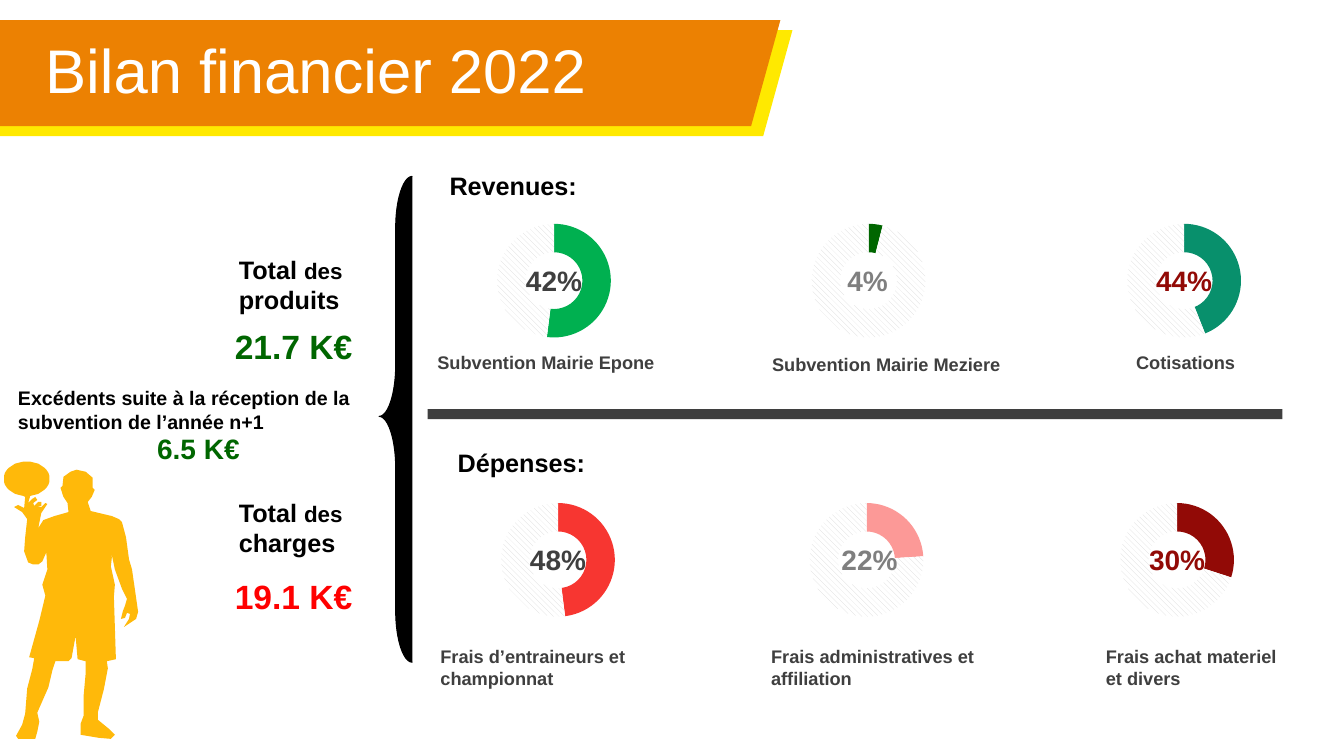
from math import cos, radians, sin

from lxml import etree
from pptx import Presentation
from pptx.chart.data import CategoryChartData
from pptx.dml.color import RGBColor
from pptx.enum.chart import XL_CHART_TYPE as ChartType
from pptx.enum.dml import MSO_PATTERN as Pattern
from pptx.enum.shapes import MSO_SHAPE as Shape
from pptx.enum.text import MSO_ANCHOR as Anchor, PP_ALIGN as Align
from pptx.oxml.ns import qn
from pptx.util import Inches, Pt

THEME = {
    "font": "Arial",
    "title": 44, "total": 24, "share": 20, "heading": 18, "small": 16, "note": 14, "caption": 13,
    "white": "FFFFFF", "black": "000000", "dark": "3F3F3F", "hatch": "D9D9D9",
    "orange": "EC8102", "yellow": "FFE900", "player": "FFB90A",
    "green": "006600", "red": "FF0000",
}
SHARE_COLORS = ("3F3F3F", "7F7F7F", "920A06")

# Banner: colour, top, top-right x, bottom-right x
BANNERS = [("yellow", 0.3, 7.86, 7.57), ("orange", 0.2, 7.74, 7.45)]
BANNER_HEIGHT = 1.05

# Section: heading, its left and top, chart top, then the three rings
# Ring: left, share left, hole, value, colour, share, caption, caption left and top
SECTIONS = [
    ("Revenues:", 4.36, 1.64, 2.06, [
        (4.79, 5.08, 72, 52, "00B050", "42%", "Subvention Mairie Epone", 4.24, 3.44),
        (7.91, 8.19, 78, 4, "006600", "4%", "Subvention Mairie Meziere", 7.56, 3.46),
        (11.04, 11.33, 78, 44, "08906C", "44%", "Cotisations", 11.17, 3.44),
    ]),
    ("Dépenses:", 4.44, 4.39, 4.83, [
        (4.83, 5.12, 78, 48, "F73631", "48%", "Frais d’entraineurs et championnat", 4.27, 6.35),
        (7.89, 8.21, 78, 24, "FC9997", "22%", "Frais administratives et affiliation", 7.55, 6.35),
        (10.97, 11.26, 78, 30, "920A06", "30%", "Frais achat materiel\net divers", 10.87, 6.35),
    ]),
]
RING_SIZE = (1.41, 1.45)
RING_LAYOUT = {"x": 0.1, "y": 0.11, "w": 0.8, "h": 0.78}

# Total: what is counted, label top, amount, amount top, colour
TOTALS = [("produits", 2.47, "21.7 K€", 3.18, "green"), ("charges", 4.88, "19.1 K€", 5.66, "red")]
SURPLUS = ("Excédents suite à la réception de la subvention de l’année n+1", "6.5 K€")

# Player outline in hundredths of an inch, clockwise from the finger under the ball
BALL = {"cx": 26.5, "cy": 475, "rx": 22.5, "ry": 17}
PLAYER = [
    (28, 499), (32, 495), (35, 493), (37, 496), (33, 499), (34, 502), (38, 498), (41, 498),
    (41, 502), (37, 503), (41, 503), (45, 499), (47, 500), (41, 509), (38, 524), (43, 516),
    (54, 512), (68, 508), (67, 499), (63, 493), (60, 484), (62, 482), (63, 473), (70, 468),
    (76, 466), (85, 468), (92, 474), (92, 484), (94, 486), (91, 493), (87, 498), (90, 507),
    (111, 512), (118, 515), (121, 518), (125, 533), (128, 555), (131, 565), (137, 607), (135, 614),
    (123, 622), (128, 614), (129, 609), (126, 608), (124, 613), (120, 614), (122, 606), (124, 601),
    (126, 594), (121, 584), (114, 565), (110, 546), (111, 553), (110, 562), (114, 580), (113, 592),
    (115, 654), (106, 656), (107, 663), (103, 684), (97, 707), (97, 714), (108, 723), (114, 729),
    (110, 733), (98, 732), (80, 729), (80, 718), (83, 710), (83, 690), (85, 668), (85, 656),
    (77, 654), (75, 631), (71, 653), (68, 656), (55, 656), (52, 665), (48, 682), (37, 707),
    (39, 716), (37, 726), (35, 733), (18, 733), (16, 730), (22, 719), (25, 708), (27, 683),
    (32, 664), (34, 653), (29, 652), (39, 616), (45, 591), (42, 580), (47, 565), (46, 548),
    (42, 557), (38, 560), (33, 560), (28, 558), (24, 547), (25, 533), (27, 515), (22, 508),
    (14, 503), (18, 501), (24, 504), (25, 493),
]


def color(name):
    return RGBColor.from_string(THEME.get(name, name))


def paint(shape, fill, line=None):
    shape.shadow.inherit = False
    shape.fill.solid()
    shape.fill.fore_color.rgb = color(fill)
    if line:
        shape.line.color.rgb = color(line)
        shape.line.width = Pt(0.75)
    else:
        shape.line.fill.background()


def add_outline(slide, points, fill):
    """Closed filled polygon; points are in hundredths of an inch."""
    builder = slide.shapes.build_freeform(*points[0], scale=Inches(0.01))
    builder.add_line_segments(points[1:], close=True)
    paint(builder.convert_to_shape(), fill)


def add_text(slide, box, text, size, ink, bold=True, anchor=Anchor.TOP,
             align=Align.LEFT, inset=True, spacing=1.0):
    """text is a string, one paragraph a line, or a list of (text, size) runs."""
    frame = slide.shapes.add_textbox(*map(Inches, box)).text_frame
    margins = (0.1, 0.05) if inset else (0, 0)
    layout = {"word_wrap": True, "vertical_anchor": anchor,
              "margin_left": Inches(margins[0]), "margin_right": Inches(margins[0]),
              "margin_top": Inches(margins[1]), "margin_bottom": Inches(margins[1])}
    for key, value in layout.items():
        setattr(frame, key, value)
    lines = [[(line, size)] for line in text.split("\n")] if isinstance(text, str) else [text]
    for number, runs in enumerate(lines):
        paragraph = frame.add_paragraph() if number else frame.paragraphs[0]
        paragraph.alignment = align
        paragraph.line_spacing = spacing
        for words, run_size in runs:
            run = paragraph.add_run()
            run.text = words
            for key, value in {"name": THEME["font"], "size": Pt(THEME[run_size]), "bold": bold}.items():
                setattr(run.font, key, value)
            run.font.color.rgb = color(ink)


def add_ring(slide, left, top, hole, value, ink):
    ring_data = CategoryChartData()
    ring_data.categories = ["1", "2"]
    ring_data.add_series("Series 1", (value, 100 - value))
    chart = slide.shapes.add_chart(
        ChartType.DOUGHNUT, *map(Inches, (left, top, *RING_SIZE)), ring_data).chart
    chart.has_legend = chart.has_title = False
    chart.font.name, chart.font.size = THEME["font"], Pt(THEME["heading"])
    chart.font.color.rgb = color("black")
    plot = chart.plots[0]
    plot.vary_by_categories = True
    part, rest = (plot.series[0].points[i].format for i in range(2))
    part.fill.solid()
    part.fill.fore_color.rgb = color(ink)
    rest.fill.patterned()
    rest.fill.pattern = Pattern.WIDE_DOWNWARD_DIAGONAL
    rest.fill.fore_color.rgb = color("hatch")
    rest.fill.back_color.rgb = color("white")
    for slice_format in (part, rest):
        slice_format.line.fill.background()

    area = chart.element.find(".//" + qn("c:plotArea"))
    area.find(".//" + qn("c:holeSize")).set("val", str(hole))
    for old in area.findall(qn("c:layout")):
        area.remove(old)
    layout = etree.Element(qn("c:layout"))
    manual = etree.SubElement(layout, qn("c:manualLayout"))
    settings = {"layoutTarget": "inner", "xMode": "edge", "yMode": "edge", **RING_LAYOUT}
    for tag, setting in settings.items():
        etree.SubElement(manual, qn("c:" + tag)).set("val", str(setting))
    area.insert(0, layout)


def add_section(slide, heading, left, top, ring_top, rings):
    add_text(slide, (left, top, 8.91, 0.4), heading, "heading", "black", anchor=Anchor.MIDDLE)
    for ring, share_ink in zip(rings, SHARE_COLORS):
        ring_left, share_left, hole, value, ink, share, caption, caption_left, caption_top = ring
        add_ring(slide, ring_left, ring_top, hole, value, ink)
        add_text(slide, (share_left, ring_top + 0.55, 0.83, 0.34), share, "share", share_ink,
                 anchor=Anchor.MIDDLE, align=Align.CENTER, inset=False)
        add_text(slide, (caption_left, caption_top, 2.7, 0.32), caption, "caption", "dark")


def main():
    deck = Presentation()
    deck.slide_width, deck.slide_height = Inches(13.33), Inches(7.5)
    slide = deck.slides.add_slide(deck.slide_layouts[6])

    for fill, top, upper_right, lower_right in BANNERS:
        corners = [(upper_right, top), (0, top), (0, top + BANNER_HEIGHT),
                   (lower_right, top + BANNER_HEIGHT)]
        add_outline(slide, [(x * 100, y * 100) for x, y in corners], fill)
    add_text(slide, (0.35, 0.35, 6.93, 0.79), "Bilan financier 2022", "title", "white",
             bold=False, spacing=0.9)

    ball = [(BALL["cx"] + BALL["rx"] * cos(radians(a)), BALL["cy"] + BALL["ry"] * sin(radians(a)))
            for a in range(100, 450, 10)]
    add_outline(slide, ball + PLAYER, "player")

    for section in SECTIONS:
        add_section(slide, *section)
    divider = slide.shapes.add_shape(Shape.RECTANGLE, *map(Inches, (4.24, 4.06, 8.48, 0.1)))
    paint(divider, "dark")
    brace = slide.shapes.add_shape(Shape.LEFT_BRACE, *map(Inches, (3.76, 1.75, 0.33, 4.82)))
    brace.adjustments[0], brace.adjustments[1] = 1.556, 0.494
    paint(brace, "black", line="black")

    for counted, top, amount, amount_top, ink in TOTALS:
        label = [("Total ", "heading"), ("des", "small"), (" " + counted, "heading")]
        add_text(slide, (2.27, top, 1.93, 0.71), label, "heading", "black", anchor=Anchor.MIDDLE)
        add_text(slide, (2.23, amount_top, 1.45, 0.5), amount, "total", ink)
    reason, surplus = SURPLUS
    add_text(slide, (0.08, 3.78, 3.68, 0.57), reason, "note", "black", anchor=Anchor.MIDDLE)
    add_text(slide, (1.46, 4.23, 1.45, 0.44), surplus, "share", "green")

    deck.save("out.pptx")


if __name__ == "__main__":
    main()
